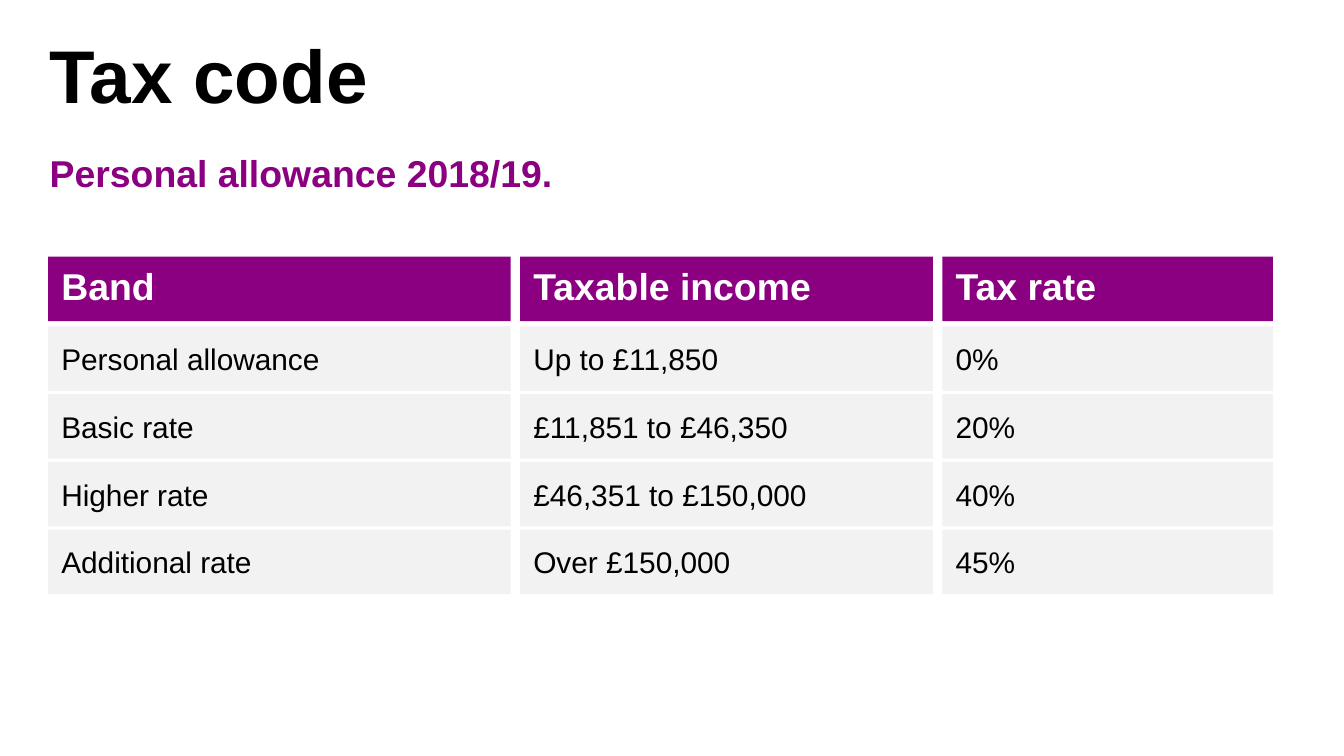
from dataclasses import dataclass

from pptx import Presentation
from pptx.dml.color import RGBColor
from pptx.enum.shapes import MSO_SHAPE as Preset
from pptx.enum.text import MSO_ANCHOR as Anchor, PP_ALIGN as Align
from pptx.shapes.autoshape import Shape
from pptx.slide import Slide
from pptx.util import Cm, Pt

COLOURS = {"purple": "8B0081", "grey": "F2F2F2", "black": "000000", "white": "FFFFFF"}
FONT = "Arial"
LEFT, TOP = 0.91, 4.85
ROW_HEIGHT = 1.22
COLUMN_GAP, HEADER_GAP, ROW_GAP = 0.18, 0.1, 0.06


@dataclass(frozen=True)
class Column:
    heading: str
    width: float
    entries: tuple[str, ...]


COLUMNS = (
    Column("Band", 8.74,
           ("Personal allowance", "Basic rate", "Higher rate", "Additional rate")),
    Column("Taxable income", 7.8,
           ("Up to £11,850", "£11,851 to £46,350", "£46,351 to £150,000", "Over £150,000")),
    Column("Tax rate", 6.25, ("0%", "20%", "40%", "45%")),
)


def colour(name: str) -> RGBColor:
    return RGBColor.from_string(COLOURS[name])


def write(holder: Shape, text: str, *, size: float, ink: str = "black", bold: bool = False,
          anchor: Anchor = Anchor.TOP, before: float = 0, line: float = 1.0) -> None:
    frame = holder.text_frame
    frame.word_wrap = True
    frame.vertical_anchor = anchor
    paragraph = frame.paragraphs[0]
    paragraph.alignment = Align.LEFT
    paragraph.space_before = Pt(before)
    paragraph.line_spacing = line
    run = paragraph.add_run()
    run.text = text
    run.font.name = FONT
    run.font.size = Pt(size)
    run.font.bold = bold
    run.font.color.rgb = colour(ink)


def draw_cell(slide: Slide, left: float, top: float, width: float, fill: str) -> Shape:
    cell = slide.shapes.add_shape(Preset.RECTANGLE, Cm(left), Cm(top), Cm(width), Cm(ROW_HEIGHT))
    cell.shadow.inherit = False
    cell.fill.solid()
    cell.fill.fore_color.rgb = colour(fill)
    cell.line.fill.background()
    return cell


def draw_column(slide: Slide, column: Column, left: float) -> None:
    heading = draw_cell(slide, left, TOP, column.width, "purple")
    write(heading, column.heading, size=20, ink="white", bold=True, before=6)
    first_row = TOP + ROW_HEIGHT + HEADER_GAP
    for index, entry in enumerate(column.entries):
        top = first_row + index * (ROW_HEIGHT + ROW_GAP)
        cell = draw_cell(slide, left, top, column.width, "grey")
        write(cell, entry, size=16, anchor=Anchor.MIDDLE, before=6)


def main() -> None:
    deck = Presentation()
    deck.slide_width, deck.slide_height = Cm(25.4), Cm(14.29)
    slide = deck.slides.add_slide(deck.slide_layouts[6])

    title = slide.shapes.add_textbox(Cm(0.69), Cm(0.61), Cm(24.18), Cm(2.06))
    write(title, "Tax code", size=40, bold=True, line=0.9)
    subtitle = slide.shapes.add_textbox(Cm(0.69), Cm(2.72), Cm(17.37), Cm(1.6))
    write(subtitle, "Personal allowance 2018/19.", size=20, ink="purple", bold=True, before=18)

    left = LEFT
    for column in COLUMNS:
        draw_column(slide, column, left)
        left += column.width + COLUMN_GAP

    deck.save("out.pptx")


if __name__ == "__main__":
    main()
